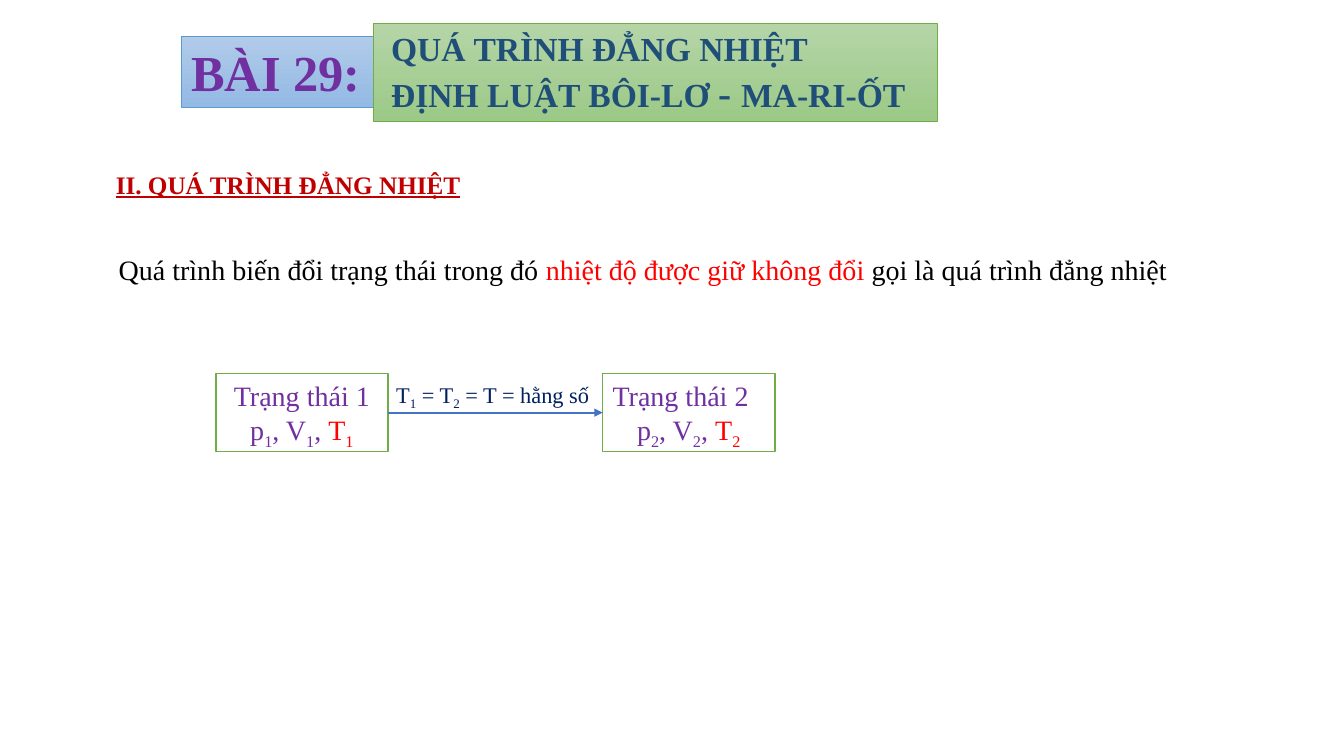
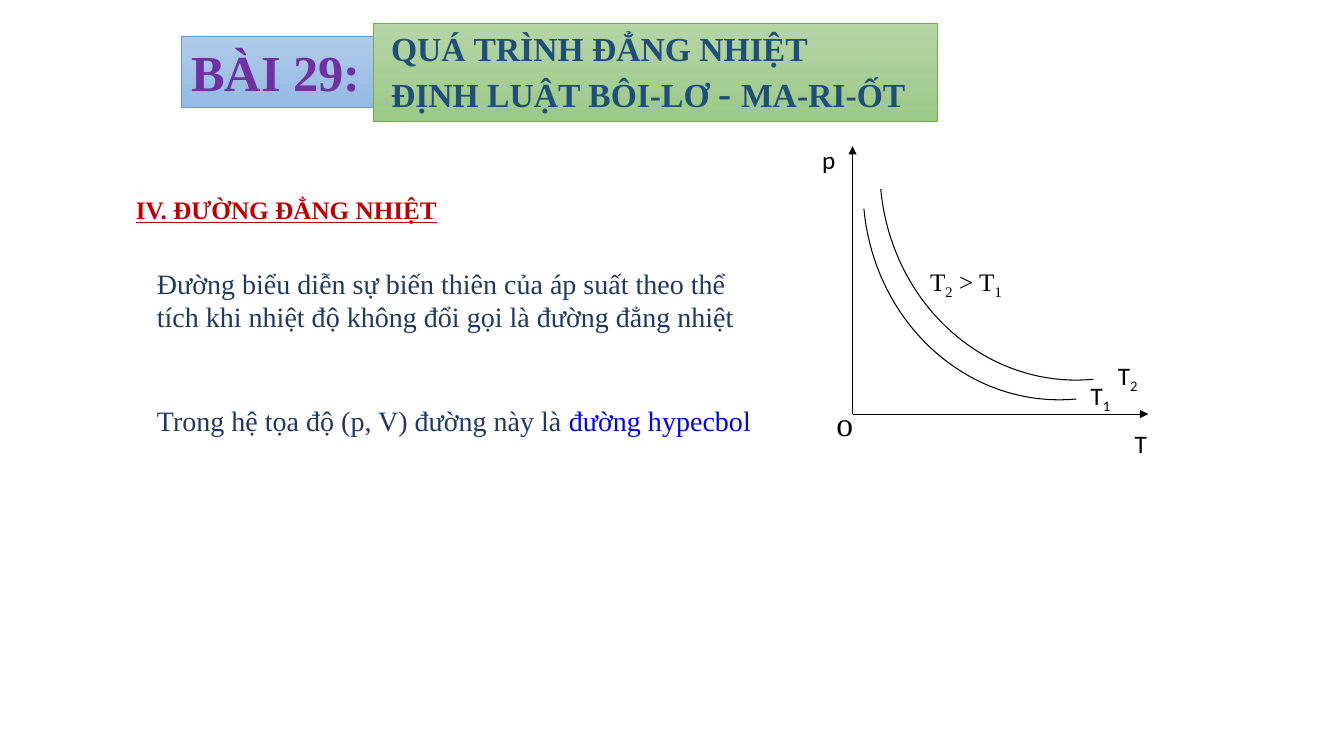
from dataclasses import dataclass

from lxml import etree
from pptx import Presentation
from pptx import util as u
from pptx.dml.color import RGBColor
from pptx.enum import shapes, text
from pptx.oxml import ns

WIDTH, HEIGHT = u.Inches(13.33), u.Inches(7.5)
COLUMNS, ROWS = 32, 18


@dataclass(frozen=True)
class Theme:
    serif: str = "Times New Roman"
    sans: str = "Calibri"
    # Colours
    black: str = "000000"
    white: str = "FFFFFF"
    purple: str = "7030A0"
    red: str = "FF0000"
    dark_red: str = "C00000"
    title_blue: str = "1F4E79"
    body_blue: str = "203864"
    link_blue: str = "002060"
    accent_blue: str = "0000FF"
    arrow: str = "4472C4"
    green: str = "70AD47"
    badge_line: str = "5B9BD5"
    badge_fill: tuple = ("B1CBE9", "93B9E4")
    title_fill: tuple = ("B5D5A7", "9CC987")
    # Type sizes
    badge_size: int = 36
    dash_size: int = 28
    title_size: int = 24
    body_size: int = 20
    label_size: int = 18
    link_size: int = 16


THEME = Theme()


# Grid and colour helpers
def col(n):
    return int(WIDTH * n / COLUMNS)


def row(n):
    return int(HEIGHT * n / ROWS)


def cells(area):
    left, top, width, height = area
    return col(left), row(top), col(width), row(height)


def rgb(colour):
    return RGBColor.from_string(colour)


# Text: "_" lowers the character that follows it
def add_runs(paragraph, content, colour=None, size=None):
    first, *rest = content.split("_")
    pieces = [(first, False)]
    for part in rest:
        pieces += [(part[0], True), (part[1:], False)]
    for piece, lowered in pieces:
        if not piece:
            continue
        run = paragraph.add_run()
        run.text = piece
        if colour:
            run.font.color.rgb = rgb(colour)
        if size:
            run.font.size = u.Pt(size)
        if lowered:
            run.font._element.set("baseline", "-25000")


def write(shape, lines, size, colour, font=THEME.serif, bold=None,
          underline=None, aligns=(), inset=0.1):
    """Each line is a string or a list of (text, colour, size) parts."""
    frame = shape.text_frame
    frame.word_wrap = True
    frame.vertical_anchor = text.MSO_ANCHOR.TOP
    frame.margin_left = u.Inches(inset)
    for i, line in enumerate(lines):
        paragraph = frame.add_paragraph() if i else frame.paragraphs[0]
        paragraph.alignment = aligns[i] if aligns else text.PP_ALIGN.LEFT
        paragraph.font.name = font
        paragraph.font.size = u.Pt(size)
        paragraph.font.color.rgb = rgb(colour)
        paragraph.font.bold = bold
        paragraph.font.underline = underline
        for part in [(line,)] if isinstance(line, str) else line:
            add_runs(paragraph, *part)


def add_text(slide, area, lines, size=THEME.body_size, colour=THEME.black, **style):
    write(slide.shapes.add_textbox(*cells(area)), lines, size, colour, **style)


# Boxes and lines
def add_box(slide, area, fill, line, weight):
    box = slide.shapes.add_shape(shapes.MSO_SHAPE.RECTANGLE, *cells(area))
    box.shadow.inherit = False
    if isinstance(fill, tuple):
        box.fill.gradient()
        box.fill.gradient_angle = 270
        for stop, colour in zip(box.fill.gradient_stops, fill):
            stop.color.rgb = rgb(colour)
    else:
        box.fill.solid()
        box.fill.fore_color.rgb = rgb(fill)
    box.line.color.rgb = rgb(line)
    box.line.width = u.Pt(weight)
    return box


def add_arrow(slide, start, end, colour, weight):
    arrow = slide.shapes.add_connector(
        shapes.MSO_CONNECTOR.STRAIGHT,
        col(start[0]), row(start[1]), col(end[0]), row(end[1]))
    arrow.line.color.rgb = rgb(colour)
    arrow.line.width = u.Pt(weight)
    etree.SubElement(arrow.line._get_or_add_ln(), ns.qn("a:tailEnd"), type="triangle")
    etree.SubElement(arrow._element.spPr, ns.qn("a:effectLst"))
    return arrow


def add_curve(slide, controls, steps=40):
    """Draw a cubic Bezier curve through its four control points."""
    def point(t):
        weights = ((1 - t) ** 3, 3 * t * (1 - t) ** 2, 3 * t ** 2 * (1 - t), t ** 3)
        x, y = (sum(w * c for w, c in zip(weights, axis)) for axis in zip(*controls))
        return col(x), row(y)

    points = [point(i / steps) for i in range(steps + 1)]
    builder = slide.shapes.build_freeform(*points[0])
    builder.add_line_segments(points[1:], close=False)
    curve = builder.convert_to_shape()
    curve.shadow.inherit = False
    curve.fill.background()
    curve.line.color.rgb = rgb(THEME.black)
    curve.line.width = u.Pt(0.75)


# Parts that the slides share
def add_lesson_slide(deck, heading, heading_area):
    slide = deck.slides.add_slide(deck.slide_layouts[6])
    badge = add_box(slide, (4.32, 0.86, 4.56, 1.7), THEME.badge_fill, THEME.badge_line, 0.5)
    write(badge, ["BÀI 29:"], THEME.badge_size, THEME.purple, bold=True)
    title = add_box(slide, (8.88, 0.55, 13.44, 2.35), THEME.title_fill, THEME.green, 0.5)
    write(title, ["QUÁ TRÌNH ĐẲNG NHIỆT",
                  [("ĐỊNH LUẬT BÔI-LƠ ",), ("- ", None, THEME.dash_size), ("MA-RI-ỐT",)]],
          THEME.title_size, THEME.title_blue, bold=True, inset=0.18)
    add_text(slide, heading_area, [heading], THEME.label_size, THEME.dark_red,
             bold=True, underline=True)
    return slide


# Slide 1: the isothermal process
def add_state(slide, number, left, heading_align):
    state = add_box(slide, (left, 8.9, 4.1, 1.85), THEME.white, THEME.green, 1)
    write(state, [f"Trạng thái {number}",
                  [(f"p_{number}, V_{number}, ",), (f"T_{number}", THEME.red)]],
          THEME.body_size, THEME.purple, aligns=(heading_align, text.PP_ALIGN.CENTER))
    return state


def build_process(deck):
    slide = add_lesson_slide(deck, "II. QUÁ TRÌNH ĐẲNG NHIỆT", (2.52, 3.91, 8.93, 0.96))
    add_text(slide, (2.59, 5.9, 26.06, 1.06),
             [[("Quá trình biến đổi trạng thái trong đó ",),
               ("nhiệt độ được giữ không đổi ", THEME.red),
               ("gọi là quá trình đẳng nhiệt",)]])
    before = add_state(slide, 1, 5.14, text.PP_ALIGN.CENTER)
    after = add_state(slide, 2, 14.35, text.PP_ALIGN.LEFT)
    change = add_arrow(slide, (9.24, 9.83), (14.35, 9.83), THEME.arrow, 1.5)
    change.begin_connect(before, 3)
    change.end_connect(after, 1)
    add_text(slide, (9.05, 8.95, 5.52, 0.89), ["T_1 = T_2 = T = hằng số"],
             THEME.link_size, THEME.link_blue, inset=0.16)


# Slide 2: the isotherm
def add_isotherms(slide):
    origin = (20.3, 9.86)
    for axis_end in ((20.3, 3.48), (27.34, 9.86)):
        add_arrow(slide, origin, axis_end, THEME.black, 0.5)
    isotherm = ((20.57, 4.97), (20.83, 7.73), (23.09, 9.74), (25.63, 9.5))
    for i in range(2):
        add_curve(slide, [(x + 0.4 * i, y - 0.47 * i) for x, y in isotherm])
        add_text(slide, (25.73 + 0.65 * i, 8.93 - 0.48 * i, 1.61, 1.2), [f"T_{i + 1}"],
                 THEME.label_size, font=THEME.sans)
    for name, area, size, font in (
            ("T_2 > T_1", (21.91, 6.22, 2.76, 0.96), THEME.label_size, THEME.serif),
            ("o", (19.68, 9.48, 0.89, 1.2), THEME.title_size, THEME.serif),
            ("p", (19.34, 3.31, 0.77, 0.96), THEME.label_size, THEME.sans),
            ("T", (26.78, 10.08, 0.65, 0.96), THEME.label_size, THEME.sans)):
        add_text(slide, area, [name], size, font=font)


def build_isotherm(deck):
    slide = add_lesson_slide(deck, "IV. ĐƯỜNG ĐẲNG NHIỆT", (3, 4.51, 7.73, 0.96))
    add_isotherms(slide)
    add_text(slide, (3.5, 6.22, 14.3, 1.85),
             ["Đường biểu diễn sự biến thiên của áp suất theo thể tích khi nhiệt độ "
              "không đổi gọi là đường đẳng nhiệt"], colour=THEME.body_blue)
    add_text(slide, (3.5, 9.48, 15.17, 1.06),
             [[("Trong hệ tọa độ (p, V) đường này là ",),
               ("đường hypecbol", THEME.accent_blue)]], colour=THEME.body_blue)


def main():
    deck = Presentation()
    deck.slide_width, deck.slide_height = WIDTH, HEIGHT
    build_process(deck)
    build_isotherm(deck)
    deck.save("out.pptx")


if __name__ == "__main__":
    main()
